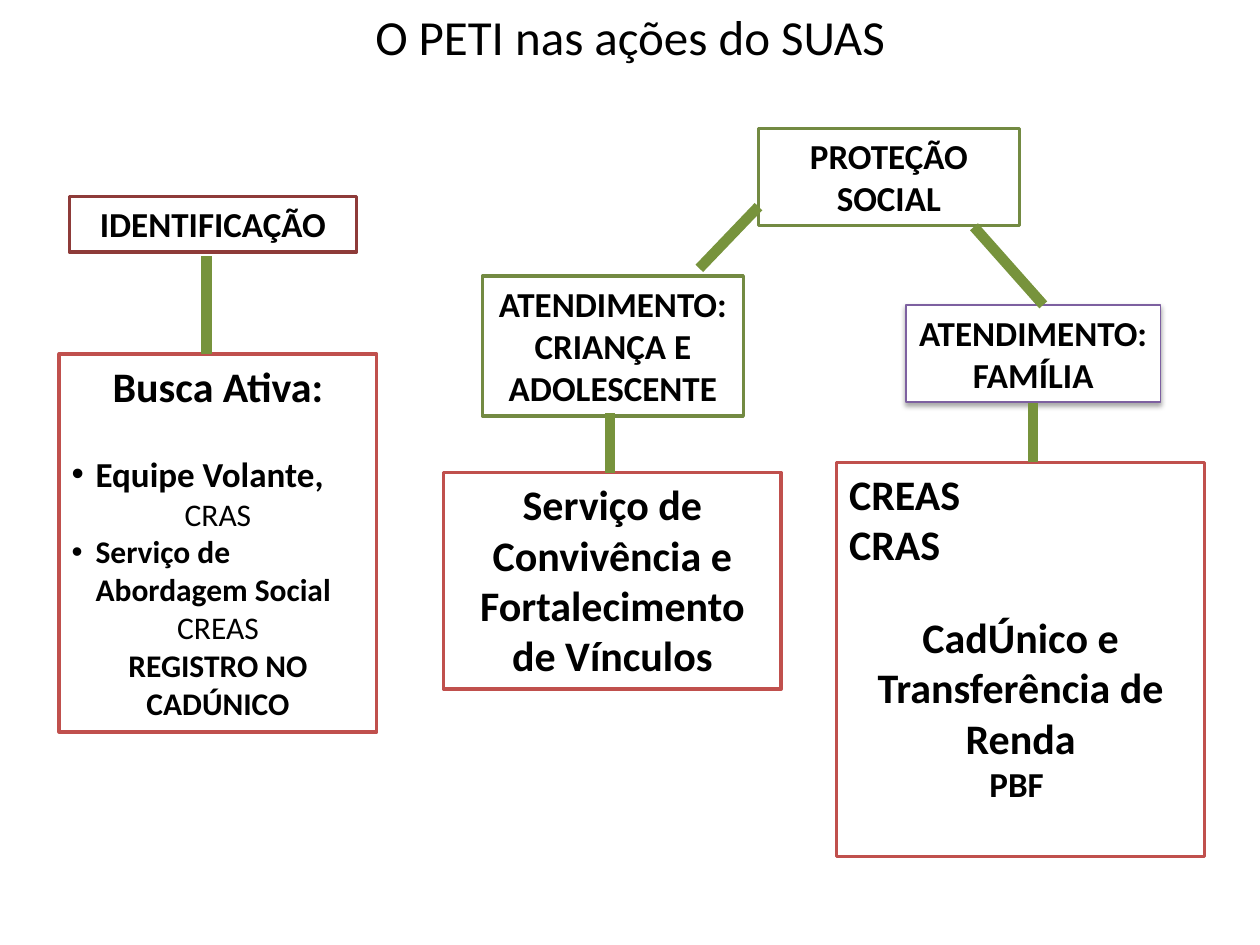
from lxml.etree import SubElement
from pptx import Presentation
from pptx.dml.color import RGBColor
from pptx.enum.shapes import MSO_CONNECTOR, MSO_SHAPE
from pptx.enum.text import MSO_ANCHOR, PP_ALIGN
from pptx.oxml.ns import qn
from pptx.util import Inches, Pt

COLORS = {
    "white": "FFFFFF", "black": "000000", "maroon": "8E3B39",
    "red": "C0504D", "olive": "738A42", "green": "77933C", "purple": "7D60A0",
}
FONT = "Calibri"
COLS, ROWS = 100, 75  # grid over the slide
WIDTH, HEIGHT = Inches(10), Inches(7.5)
CENTER, JUSTIFY, LEFT = PP_ALIGN.CENTER, PP_ALIGN.JUSTIFY, PP_ALIGN.LEFT


def color(name):
    return RGBColor.from_string(COLORS[name])


def col(n):
    return round(WIDTH * n / COLS)


def row(n):
    return round(HEIGHT * n / ROWS)


def para(text, size=20, bold=True, align=CENTER, bullet=False, before=0):
    return dict(text=text, size=size, bold=bold, align=align,
                bullet=bullet, before=before)


def add_bullet(p):
    pPr = p._p.get_or_add_pPr()
    pPr.set("marL", str(Inches(0.19)))
    pPr.set("indent", str(-Inches(0.19)))
    SubElement(pPr, qn("a:buFont")).set("typeface", "Arial")
    SubElement(pPr, qn("a:buChar")).set("char", "•")


def write(tf, paras, anchor=MSO_ANCHOR.TOP):
    tf.word_wrap = True
    tf.vertical_anchor = anchor
    for i, item in enumerate(paras):
        p = tf.paragraphs[0] if i == 0 else tf.add_paragraph()
        p.alignment = item["align"]
        p.space_before = Pt(item["before"])
        if item["bullet"]:
            add_bullet(p)
        for j, line in enumerate(item["text"].split("\n")):
            if j:
                p.add_line_break()
            r = p.add_run()
            r.text = line
            r.font.name = FONT
            r.font.size = Pt(item["size"])
            r.font.bold = item["bold"]
            r.font.color.rgb = color("black")


def add_shadow(sp):
    effects = sp._element.spPr.find(qn("a:effectLst"))
    shadow = SubElement(effects, qn("a:outerShdw"), blurRad=str(Pt(3.1)),
                        dist=str(Pt(1.8)), dir="5400000", rotWithShape="0")
    rgb = SubElement(shadow, qn("a:srgbClr"), val=COLORS["black"])
    SubElement(rgb, qn("a:alpha"), val="35000")


def add_box(s, x, y, w, h, line, paras, weight=2):
    sp = s.shapes.add_shape(MSO_SHAPE.RECTANGLE, col(x), row(y), col(w), row(h))
    sp.shadow.inherit = False
    sp.fill.solid()
    sp.fill.fore_color.rgb = color("white")
    sp.line.color.rgb = color(line)
    sp.line.width = Pt(weight)
    write(sp.text_frame, paras)
    return sp


def add_link(s, x1, y1, x2, y2):
    c = s.shapes.add_connector(MSO_CONNECTOR.STRAIGHT,
                               col(x1), row(y1), col(x2), row(y2))
    c.line.color.rgb = color("green")
    c.line.width = Pt(6)
    SubElement(c._element.spPr, qn("a:effectLst"))


def set_title(s, text):
    title = s.shapes.title
    title.left, title.top = 0, 0
    title.width, title.height = col(100), row(5.7)
    write(title.text_frame, [para(text, 28, False)], MSO_ANCHOR.MIDDLE)


def main():
    prs = Presentation()
    prs.slide_width, prs.slide_height = WIDTH, HEIGHT
    s = prs.slides.add_slide(prs.slide_layouts[5])
    set_title(s, "O PETI nas ações do SUAS")

    # Identification branch
    add_box(s, 5.5, 15.6, 22.8, 4.4, "maroon", [para("IDENTIFICAÇÃO")])
    add_box(s, 4.7, 28.1, 25.2, 30, "red", [
        para("Busca Ativa:", 24),
        para("Equipe Volante,", align=LEFT, bullet=True, before=24),
        para("CRAS", 18, False),
        para("Serviço de Abordagem Social", 18, align=LEFT, bullet=True),
        para("CREAS", 18, False),
        para("REGISTRO NO CADÚNICO", 18),
    ])

    # Social protection, children and adolescents
    add_box(s, 60.2, 10.2, 20.7, 7.7, "olive", [para("PROTEÇÃO SOCIAL")])
    add_box(s, 38.3, 21.9, 20.7, 11.1, "olive",
            [para("ATENDIMENTO:\nCRIANÇA E ADOLESCENTE")])
    add_box(s, 35.2, 37.5, 26.8, 17.2, "red",
            [para("Serviço de Convivência e Fortalecimento de Vínculos", 24)])

    # Social protection, family
    family = add_box(s, 71.9, 24.2, 20.2, 7.7, "purple",
                     [para("ATENDIMENTO:\nFAMÍLIA")], 0.75)
    add_shadow(family)
    add_box(s, 66.4, 36.7, 29.2, 31.3, "red", [
        para("CREAS", 24, align=JUSTIFY),
        para("CRAS", 24, align=JUSTIFY),
        para("CadÚnico e", 24, before=24),
        para("Transferência de Renda", 24),
        para("PBF "),
    ])

    # Links between the boxes
    for ends in [(16.4, 28.1, 16.4, 20.3), (48.4, 37.5, 48.4, 32.8),
                 (82, 36.7, 82, 32), (55.5, 21.3, 60.2, 16.4),
                 (82.8, 24.2, 77.3, 18)]:
        add_link(s, *ends)

    prs.save("out.pptx")


if __name__ == "__main__":
    main()
